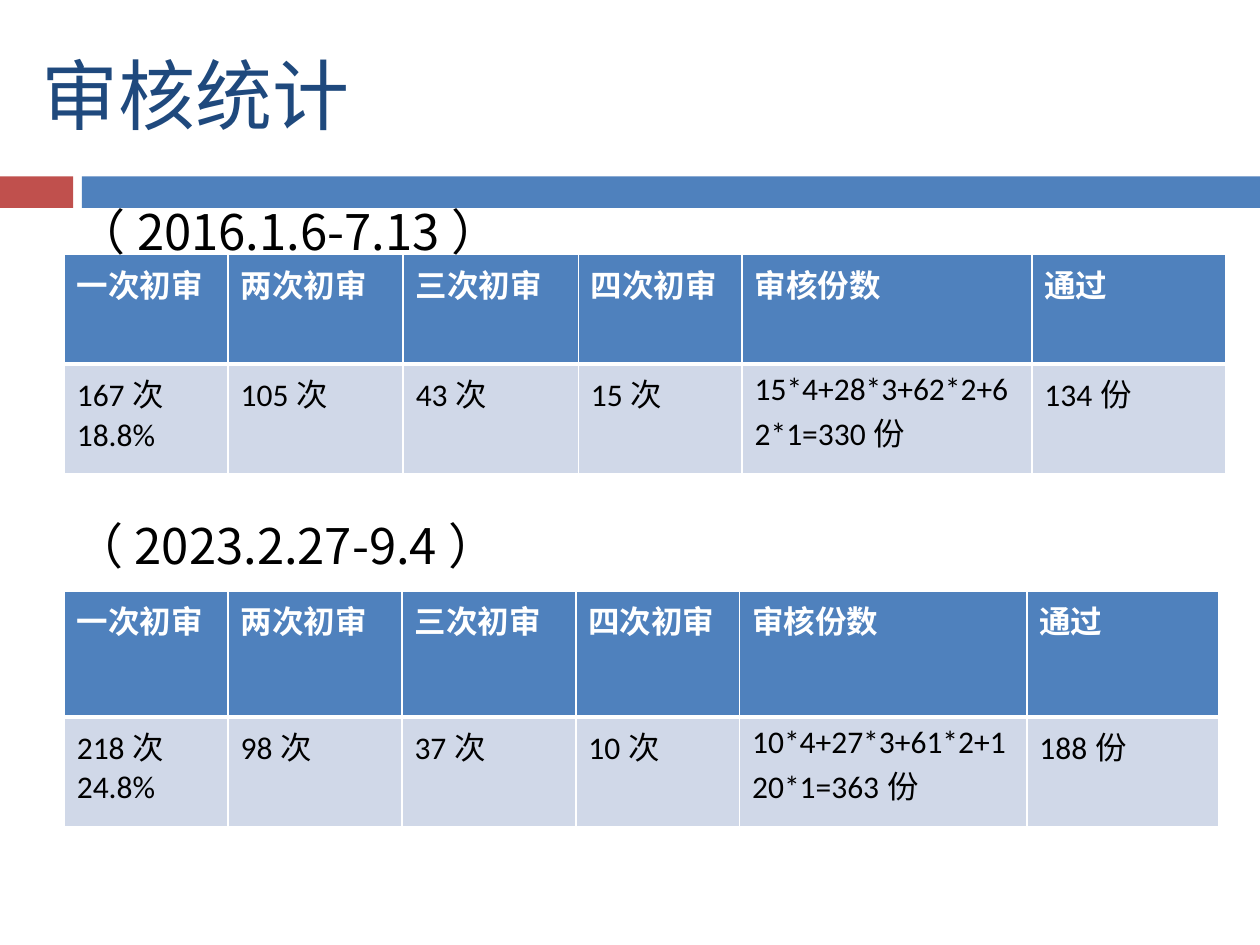
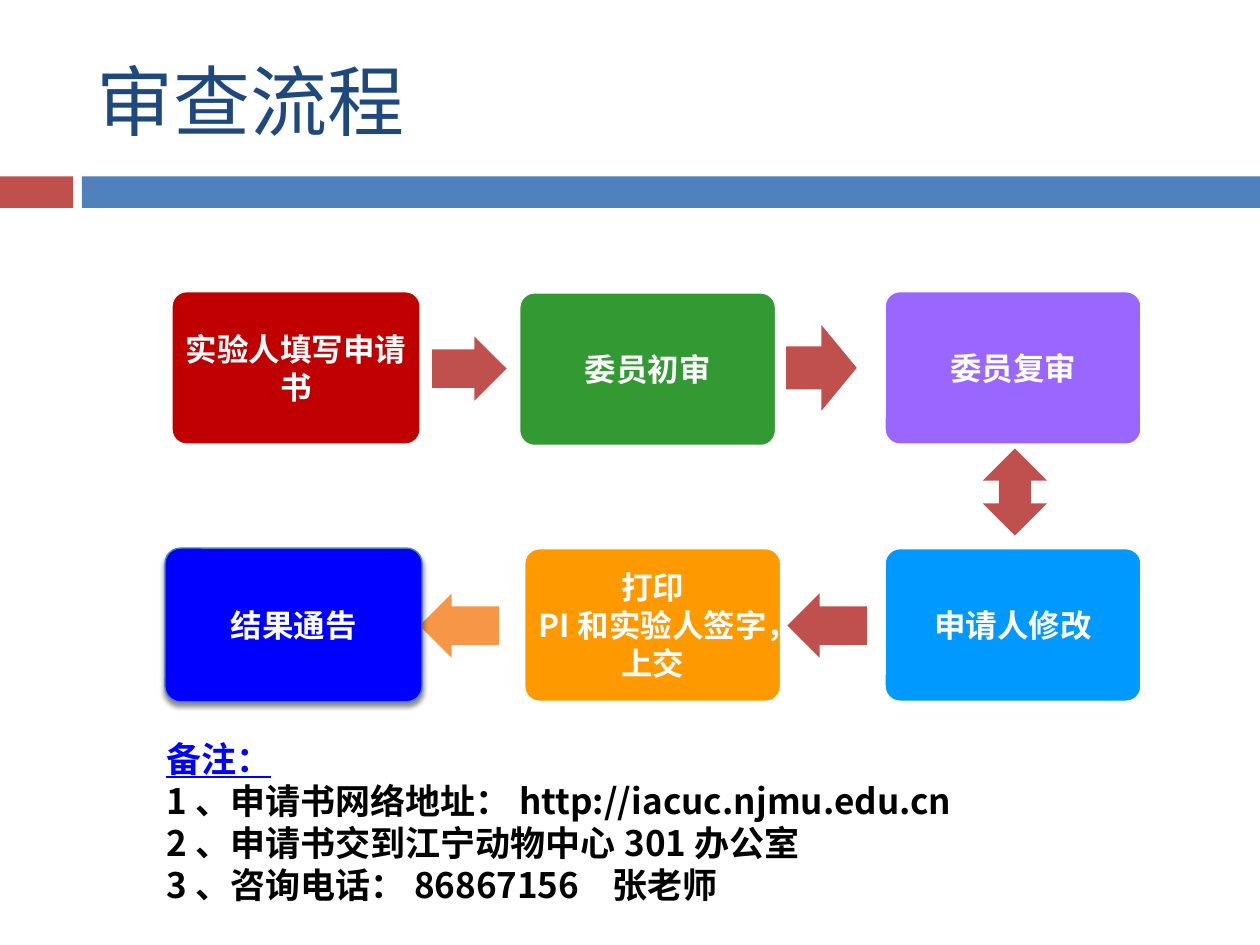
from lxml import etree
from pptx import Presentation
from pptx.dml.color import RGBColor
from pptx.enum import shapes, text
from pptx.oxml import parse_xml
from pptx.oxml.ns import nsdecls, qn
from pptx.util import Inches, Pt

CJK = "Noto Sans CJK SC"
LATIN = "Calibri"
HUE = {
    "white": "FFFFFF", "black": "000000", "navy": "1F497D", "blue": "4F81BD",
    "red": "C0504D", "pale": "D0D8E8", "crimson": "C00000", "green": "339933",
    "violet": "9966FF", "sky": "0099FF", "amber": "FF9900", "pure": "0000FF",
    "peach": "F79646",
}
KIND = shapes.MSO_SHAPE
MID = text.MSO_ANCHOR.MIDDLE
CENTER = text.PP_ALIGN.CENTER
HEADS = ["一次初审", "两次初审", "三次初审", "四次初审", "审核份数", "通过"]


def rgb(hue):
    return RGBColor.from_string(HUE[hue])


def style(para, size, hue, bold=False, face=CJK):
    """Set the paragraph font, with the CJK face for East Asian letters."""
    font = para.font
    font.size, font.bold, font.name = Pt(size), bold, face
    font.color.rgb = rgb(hue)
    latin = para._p.pPr.find(qn("a:defRPr")).find(qn("a:latin"))
    east = etree.Element(qn("a:ea"), typeface=CJK)
    latin.addnext(east)


def add_text(slide, box, lines, size, hue, bold=False):
    frame = slide.shapes.add_textbox(*map(Inches, box)).text_frame
    frame.word_wrap = True
    frame.text = "\n".join(lines)
    for para in frame.paragraphs:
        style(para, size, hue, bold)
    return frame


def add_shape(slide, kind, box, hue):
    shape = slide.shapes.add_shape(kind, *map(Inches, box))
    shape.shadow.inherit = False
    shape.fill.solid()
    shape.fill.fore_color.rgb = rgb(hue)
    shape.line.fill.background()
    return shape


def add_page(deck, title, box):
    """Add a blank slide with the two-part band and a title."""
    slide = deck.slides.add_slide(deck.slide_layouts[6])
    add_shape(slide, KIND.RECTANGLE, (0, 1.4, 0.58, 0.25), "red")
    add_shape(slide, KIND.RECTANGLE, (0.65, 1.4, 9.35, 0.25), "blue")
    frame = add_text(slide, box, [title], 44, "navy")
    frame.vertical_anchor = MID
    return slide


def edge(cell, base):
    """Draw white cell borders, the bottom one base points wide."""
    props = cell._tc.get_or_add_tcPr()
    for i, (side, wide) in enumerate(zip("LRTB", (1, 1, 1, base))):
        props.insert(i, parse_xml(
            f'<a:ln{side} {nsdecls("a")} w="{Pt(wide)}"><a:solidFill>'
            f'<a:srgbClr val="{HUE["white"]}"/></a:solidFill></a:ln{side}>'))


def add_stats(slide, top, widths, heights, counts):
    grid = slide.shapes.add_table(
        2, len(HEADS), Inches(0.51), Inches(top),
        Inches(sum(widths)), Inches(sum(heights))).table
    for col, width in zip(grid.columns, widths):
        col.width = Inches(width)
    looks = [("blue", "white", True, 3), ("pale", "black", False, 1)]
    for r, (row, look) in enumerate(zip((HEADS, counts), looks)):
        fill, ink, bold, base = look
        grid.rows[r].height = Inches(heights[r])
        for c, words in enumerate(row):
            cell = grid.cell(r, c)
            cell.text = words
            cell.fill.solid()
            cell.fill.fore_color.rgb = rgb(fill)
            edge(cell, base)
            for para in cell.text_frame.paragraphs:
                style(para, 18, ink, bold, LATIN)


def add_step(slide, box, hue, words):
    shape = add_shape(slide, KIND.ROUNDED_RECTANGLE, box, hue)
    shape.adjustments[0] = 0.1
    shape.line.color.rgb = rgb("white")
    shape.line.width = Pt(1.5)
    frame = shape.text_frame
    frame.word_wrap = True
    frame.vertical_anchor = MID
    frame.margin_left = frame.margin_right = Inches(0.07)
    frame.margin_top = frame.margin_bottom = Inches(0.07)
    frame.text = words
    for para in frame.paragraphs:
        para.alignment = CENTER
        style(para, 18, "white", True)
    return shape


def add_arrow(slide, kind, box, hue="red", shaft=0.5):
    add_shape(slide, kind, box, hue).adjustments[0] = shaft


def add_shade(shape):
    """Give the shape a soft shadow straight below."""
    glow = shape._element.spPr.find(qn("a:effectLst"))
    glow.append(parse_xml(
        f'<a:outerShdw {nsdecls("a")} blurRad="{Pt(3)}" dist="{Pt(2.4)}" '
        f'dir="5400000" rotWithShape="0"><a:srgbClr val="{HUE["black"]}">'
        '<a:alpha val="45000"/></a:srgbClr></a:outerShdw>'))


def add_tab(para, place):
    tabs = etree.SubElement(para._p.get_or_add_pPr(), qn("a:tabLst"))
    etree.SubElement(tabs, qn("a:tab"), pos=str(Inches(place)), algn="l")


def add_notes(slide):
    frame = slide.shapes.add_textbox(
        *map(Inches, (1.22, 5.8, 8.11, 1.45))).text_frame
    frame.word_wrap = True
    frame.text = "\n".join([
        "备注：",
        "1、申请书网络地址：http://iacuc.njmu.edu.cn",
        "2、申请书交到江宁动物中心301办公室",
        "3、咨询电话：86867156\t张老师",
    ])
    head, *rest = frame.paragraphs
    add_tab(rest[-1], 3.54)
    style(head, 20, "pure", True)
    head.font.underline = True
    for para in rest:
        style(para, 20, "black", True)


def build_stats(deck):
    slide = add_page(deck, "审核统计", (0.12, 0.44, 2.86, 0.61))
    slide.shapes[-1].text_frame.paragraphs[0].alignment = CENTER
    add_stats(slide, 2.02, [1.3, 1.39, 1.39, 1.3, 2.3, 1.54], [0.87, 0.87],
              ["167次\n18.8%", "105次", "43次", "15次",
               "15*4+28*3+62*2+62*1=330份", "134份"])
    add_text(slide, (0.51, 1.55, 5, 0.57), ["（2016.1.6-7.13）"], 28, "black")
    add_text(slide, (0.49, 4.04, 5, 0.57), ["（2023.2.27-9.4）"], 28, "black")
    add_stats(slide, 4.69, [1.3, 1.38, 1.38, 1.3, 2.28, 1.52], [1, 0.87],
              ["218次\n24.8%", "98次", "37次", "10次",
               "10*4+27*3+61*2+120*1=363份", "188份"])


def build_flow(deck):
    slide = add_page(deck, "审查流程", (0.67, 0.25, 8.92, 1.08))
    wide, high = 2.04, 1.22
    add_step(slide, (1.36, 2.31, 1.98, high), "crimson", "实验人填写申请书")
    add_step(slide, (4.12, 2.32, wide, high), "green", "委员初审")
    add_step(slide, (7.02, 2.31, wide, high), "violet", "委员复审")
    add_step(slide, (7.02, 4.35, wide, high), "sky", "申请人修改")
    add_step(slide, (4.16, 4.35, wide, high), "amber",
             "打印\nPI和实验人签字，上交")
    add_arrow(slide, KIND.RIGHT_ARROW, (3.43, 2.67, 0.59, 0.51), shaft=0.6)
    add_arrow(slide, KIND.RIGHT_ARROW, (6.24, 2.58, 0.56, 0.68))
    add_arrow(slide, KIND.UP_DOWN_ARROW, (7.8, 3.56, 0.51, 0.69))
    add_arrow(slide, KIND.LEFT_ARROW, (6.25, 4.71, 0.63, 0.51), shaft=0.6)
    add_arrow(slide, KIND.LEFT_ARROW, (3.33, 4.71, 0.63, 0.51), "peach", 0.6)
    last = add_step(slide, (1.31, 4.35, wide, high), "pure", "结果通告")
    last.line.color.rgb = rgb("blue")
    last.line.width = Pt(0.79)
    add_shade(last)
    add_notes(slide)


def main():
    deck = Presentation()
    deck.slide_width, deck.slide_height = Inches(10), Inches(7.5)
    build_stats(deck)
    build_flow(deck)
    deck.save("out.pptx")


if __name__ == "__main__":
    main()
